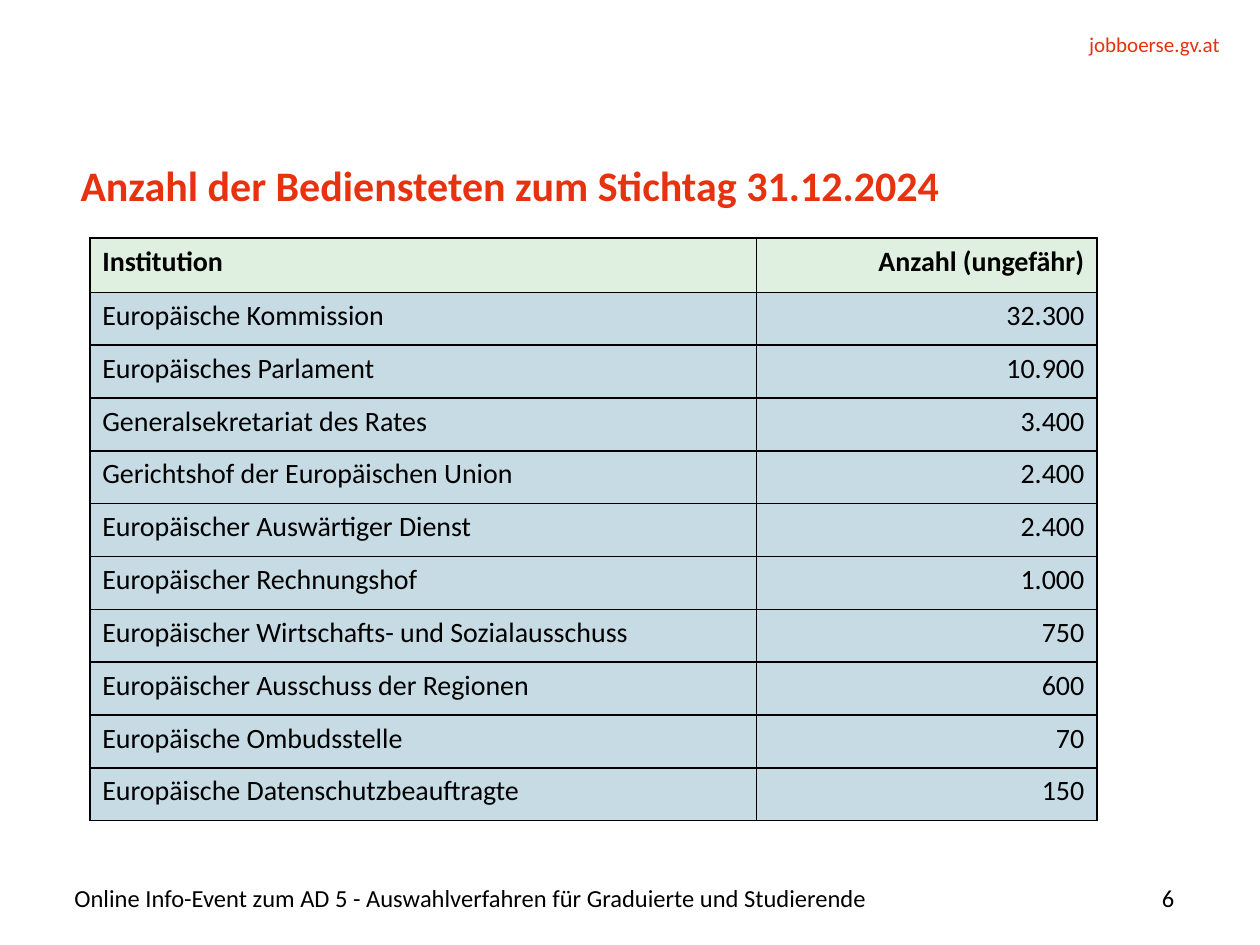
from dataclasses import dataclass

import pptx
import pptx.dml.color
import pptx.enum.text
import pptx.oxml
import pptx.oxml.ns
import pptx.util

Pt = pptx.util.Pt
Align = pptx.enum.text.PP_ALIGN
Anchor = pptx.enum.text.MSO_ANCHOR


@dataclass(frozen=True)
class Theme:
    font: str = "Calibri"
    red: str = "E6320F"
    black: str = "000000"
    green: str = "DFF0E0"
    blue: str = "C6DBE4"
    title: float = 24
    cell: float = 16
    foot: float = 14
    site: float = 12


@dataclass(frozen=True)
class Label:
    text: str
    left: float
    top: float
    width: float
    height: float
    size: float
    color: str
    align: Align = Align.LEFT
    anchor: Anchor = Anchor.MIDDLE


@dataclass(frozen=True)
class Staff:
    name: str
    count: str


THEME = Theme()
TITLE = "Anzahl der Bediensteten zum Stichtag 31.12.2024"
LABELS = [
    Label("jobboerse.gv.at", 523.5, 18, 173.5, 14.4, THEME.site, THEME.red,
          Align.RIGHT, Anchor.TOP),
    Label("Online Info-Event zum AD 5 - Auswahlverfahren für Graduierte und Studierende",
          42.5, 502.6, 541.5, 20.9, THEME.foot, THEME.black),
    Label("6", 595.4, 502.6, 75.6, 20.9, THEME.foot, THEME.black, Align.RIGHT),
]
ROWS = [
    Staff("Institution", "Anzahl (ungefähr)"),
    Staff("Europäische Kommission", "32.300"),
    Staff("Europäisches Parlament", "10.900"),
    Staff("Generalsekretariat des Rates", "3.400"),
    Staff("Gerichtshof der Europäischen Union", "2.400"),
    Staff("Europäischer Auswärtiger Dienst", "2.400"),
    Staff("Europäischer Rechnungshof", "1.000"),
    Staff("Europäischer Wirtschafts- und Sozialausschuss", "750"),
    Staff("Europäischer Ausschuss der Regionen", "600"),
    Staff("Europäische Ombudsstelle", "70"),
    Staff("Europäische Datenschutzbeauftragte", "150"),
]
WIDTHS = (381, 194.5)
HEAD, ROW = 31, 30.2


def style(para, size: float, color: str, align: Align, bold: bool = False) -> None:
    para.alignment = align
    font = para.font
    font.name, font.size, font.bold = THEME.font, Pt(size), bold
    font.color.rgb = pptx.dml.color.RGBColor.from_string(color)


def frame(shape, anchor: Anchor, wrap: bool):
    box = shape.text_frame
    box.margin_left = box.margin_right = box.margin_top = box.margin_bottom = 0
    box.vertical_anchor = anchor
    box.auto_size = pptx.enum.text.MSO_AUTO_SIZE.NONE
    box.word_wrap = wrap
    return box


def place(shape, left: float, top: float, width: float, height: float) -> None:
    shape.left, shape.top = Pt(left), Pt(top)
    shape.width, shape.height = Pt(width), Pt(height)


def draw_title(shape) -> None:
    place(shape, 46, 90, 628.5, 57.6)
    box = frame(shape, Anchor.TOP, False)
    box.text = TITLE
    para = box.paragraphs[0]
    para.line_spacing = Pt(30)
    style(para, THEME.title, THEME.red, Align.LEFT, True)


def draw_label(slide, item: Label) -> None:
    shape = slide.shapes.add_textbox(
        Pt(item.left), Pt(item.top), Pt(item.width), Pt(item.height))
    box = frame(shape, item.anchor, True)
    box.text = item.text
    style(box.paragraphs[0], item.size, item.color, item.align)


def add_lines(cell) -> None:
    props = cell._tc.get_or_add_tcPr()
    for side in ("lnL", "lnR", "lnT", "lnB"):
        props.append(pptx.oxml.parse_xml(
            f'<a:{side} {pptx.oxml.ns.nsdecls("a")} w="{Pt(1)}"><a:solidFill>'
            f'<a:srgbClr val="{THEME.black}"/></a:solidFill></a:{side}>'))


def draw_cell(cell, text: str, align: Align, head: bool) -> None:
    add_lines(cell)
    cell.fill.solid()
    fill = THEME.green if head else THEME.blue
    cell.fill.fore_color.rgb = pptx.dml.color.RGBColor.from_string(fill)
    cell.text = text
    style(cell.text_frame.paragraphs[0], THEME.cell, THEME.black, align, head)


def draw_table(slide, rows: list[Staff]) -> None:
    height = HEAD + ROW * (len(rows) - 1)
    table = slide.shapes.add_table(
        len(rows), len(WIDTHS), Pt(51.3), Pt(136.1), Pt(sum(WIDTHS)), Pt(height)).table
    for col, width in zip(table.columns, WIDTHS):
        col.width = Pt(width)
    for index, staff in enumerate(rows):
        head = index == 0
        table.rows[index].height = Pt(HEAD if head else ROW)
        draw_cell(table.cell(index, 0), staff.name, Align.LEFT, head)
        draw_cell(table.cell(index, 1), staff.count, Align.RIGHT, head)


def main() -> None:
    deck = pptx.Presentation()
    deck.slide_width, deck.slide_height = Pt(720), Pt(540)
    slide = deck.slides.add_slide(deck.slide_layouts[5])
    draw_title(slide.shapes.title)
    draw_table(slide, ROWS)
    for item in LABELS:
        draw_label(slide, item)
    deck.save("out.pptx")


if __name__ == "__main__":
    main()
